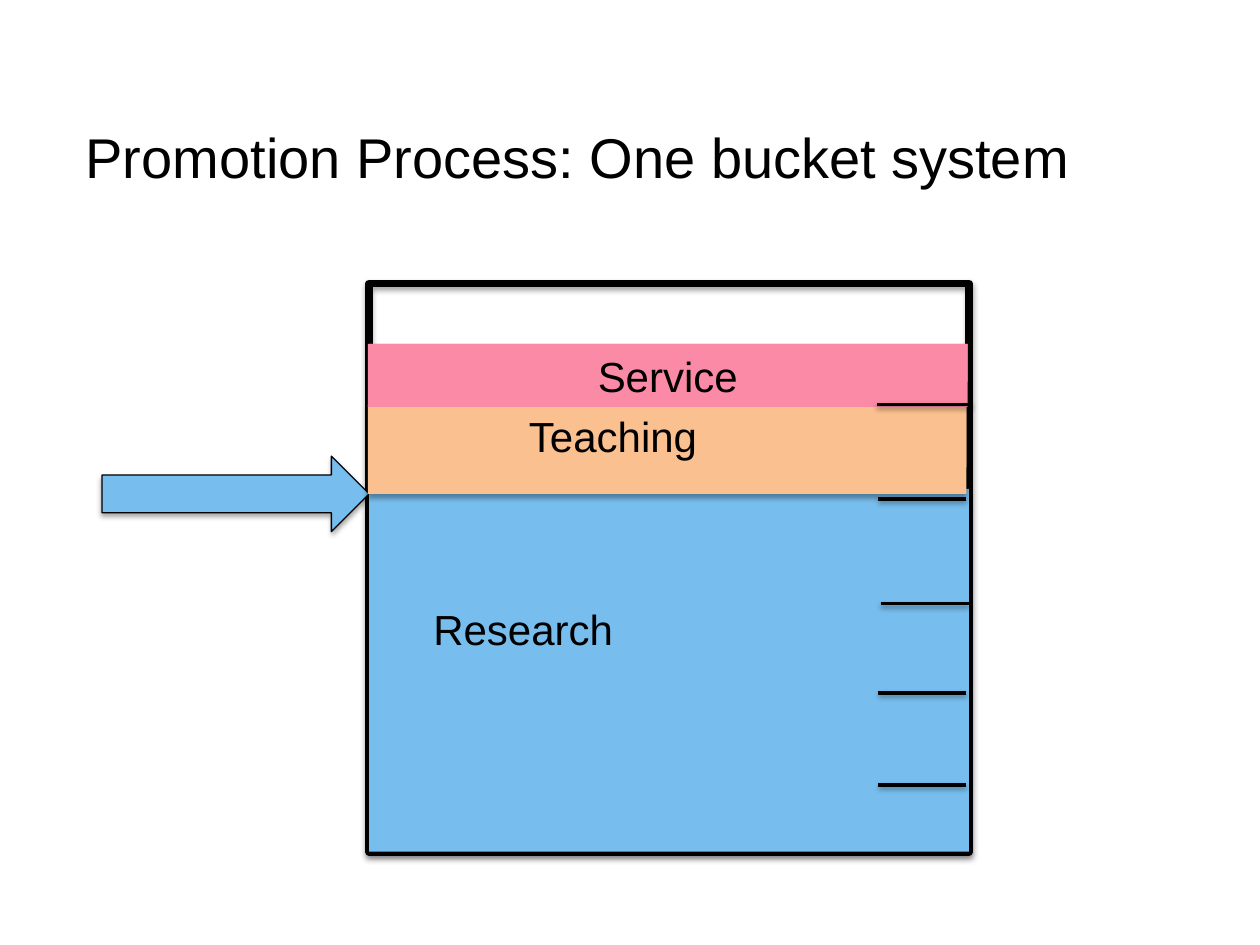
"""Build a slide showing the one bucket promotion system."""
import pptx
import pptx.dml.color
import pptx.enum.shapes
import pptx.enum.text
import pptx.oxml
import pptx.oxml.ns
import pptx.util
from pptx.util import Inches

SHAPE = pptx.enum.shapes.MSO_SHAPE
ALIGN = pptx.enum.text.PP_ALIGN
BLACK, BLUE, ORANGE, PINK = "000000", "77BEEE", "FAC090", "FA8AA6"


def color(value):
    return pptx.dml.color.RGBColor.from_string(value)


class Deck:
    font = "Arial"

    def __init__(self):
        self.prs = pptx.Presentation()
        self.prs.slide_width, self.prs.slide_height = Inches(10), Inches(7.5)
        self.s = self.prs.slides.add_slide(self.prs.slide_layouts[5])

    def label(self, sp, text, size, align=ALIGN.LEFT, wrap=True):
        tf = sp.text_frame
        tf.text = text
        tf.word_wrap = wrap
        tf.auto_size = pptx.enum.text.MSO_AUTO_SIZE.SHAPE_TO_FIT_TEXT
        tf.vertical_anchor = pptx.enum.text.MSO_ANCHOR.TOP
        p = tf.paragraphs[0]
        p.alignment = align
        f = p.runs[0].font
        f.name, f.size = self.font, pptx.util.Pt(size)
        f.color.rgb = color(BLACK)

    def title(self, text, box):
        sp = self.s.shapes.title
        sp.left, sp.top, sp.width, sp.height = map(Inches, box)
        self.label(sp, text, 32, wrap=False)

    def shadow(self, sp, alpha, dist):
        ns = pptx.oxml.ns.nsdecls("a")
        blur, dist = pptx.util.Pt(3.1), pptx.util.Pt(dist)
        sp._element.spPr.append(pptx.oxml.parse_xml(
            f'<a:effectLst {ns}><a:outerShdw blurRad="{blur}" dist="{dist}" dir="5400000" rotWithShape="0">'
            f'<a:srgbClr val="{BLACK}"><a:alpha val="{alpha * 1000}"/></a:srgbClr>'
            '</a:outerShdw></a:effectLst>'))

    def shape(self, kind, box, fill=None, line=None, shadow=True, parent=None):
        sp = (parent or self.s).shapes.add_shape(kind, *map(Inches, box))
        if fill:
            sp.fill.solid()
            sp.fill.fore_color.rgb = color(fill)
        else:
            sp.fill.background()
        if line:
            sp.line.color.rgb = color(BLACK)
            sp.line.width = pptx.util.Pt(line)
        else:
            sp.line.fill.background()
        if shadow:
            self.shadow(sp, 35, 1.8)
        else:
            sp.shadow.inherit = False
        return sp

    def layer(self, text, fill, box, label_box, align=ALIGN.LEFT):
        group = self.s.shapes.add_group_shape()
        self.shape(SHAPE.RECTANGLE, box, fill, parent=group)
        sp = self.shape(SHAPE.RECTANGLE, label_box, fill, shadow=False, parent=group)
        self.label(sp, text, 24, align)

    def marks(self, ends):
        group = self.s.shapes.add_group_shape()
        for x1, x2, y in ends:
            c = group.shapes.add_connector(
                pptx.enum.shapes.MSO_CONNECTOR.STRAIGHT,
                Inches(x1), Inches(y), Inches(x2), Inches(y))
            c.line.color.rgb = color(BLACK)
            c.line.width = pptx.util.Pt(2)
            self.shadow(c, 38, 1.6)


def main():
    d = Deck()
    d.title("Promotion Process: One bucket system", (0.58, 0.92, 8.08, 0.64))
    d.shape(SHAPE.RECTANGLE, (2.93, 2.25, 4.76, 4.51), line=4.5)
    d.shape(SHAPE.RIGHT_ARROW, (0.81, 3.62, 2.12, 0.6), BLUE, line=0.75)
    d.layer("Research", BLUE, (2.93, 3.88, 4.76, 2.88), (3.34, 4.74, 3.91, 0.66))
    d.layer("Teaching", ORANGE, (2.92, 3.21, 4.75, 0.71), (4.1, 3.21, 3.57, 0.5))
    d.layer("Service", PINK, (2.93, 2.73, 4.75, 0.3), (2.92, 2.73, 4.76, 0.5), ALIGN.CENTER)
    d.marks([(6.97, 7.67, 6.23), (6.97, 7.67, 5.5), (6.99, 7.69, 4.79),
             (6.97, 7.67, 3.96), (7.72, 6.96, 3.21)])
    d.prs.save("out.pptx")


if __name__ == "__main__":
    main()
